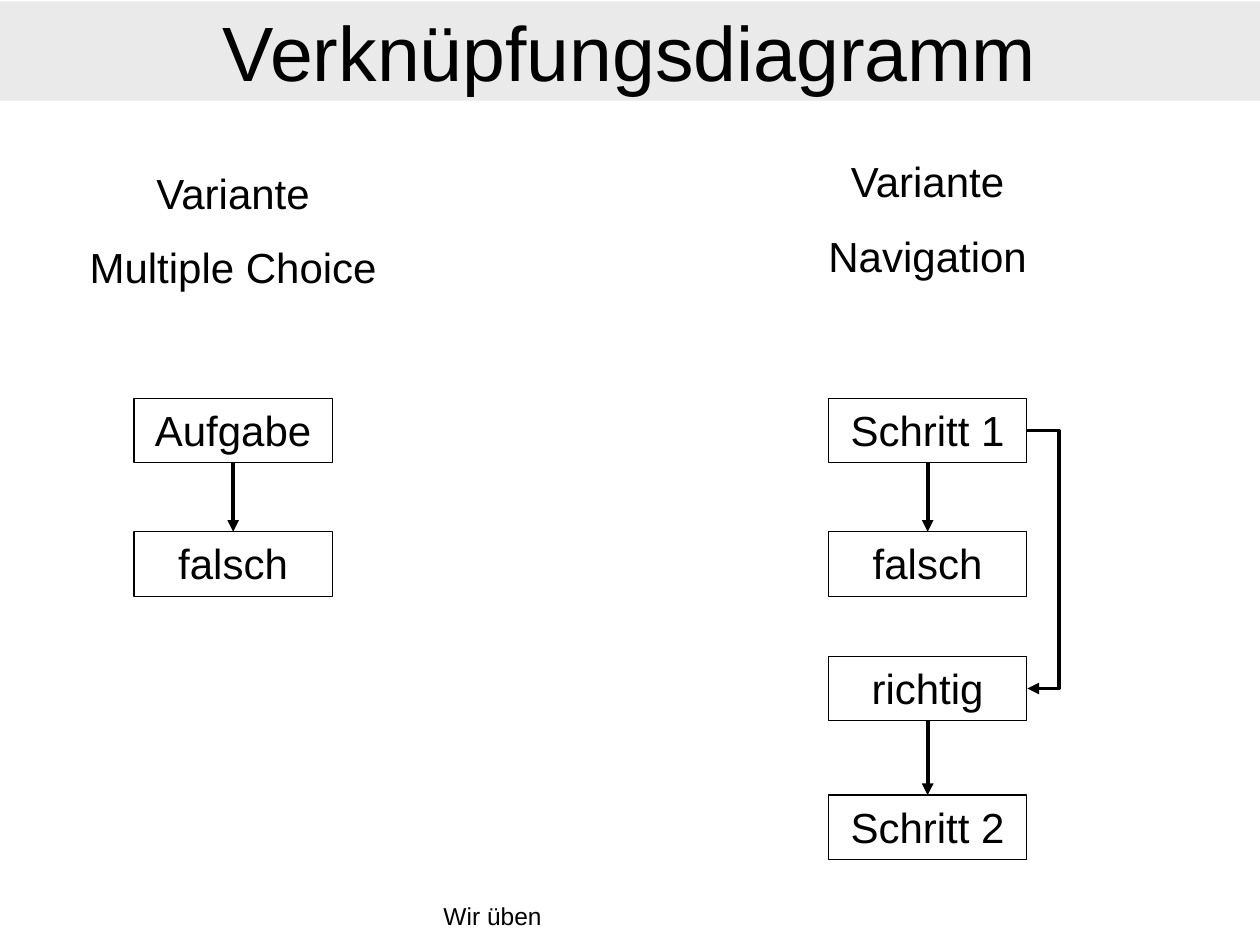
from dataclasses import dataclass

import pptx
import pptx.dml.color
import pptx.enum.shapes
import pptx.enum.text
import pptx.oxml
import pptx.oxml.ns
import pptx.util
from lxml import etree

Cm = pptx.util.Cm
Pt = pptx.util.Pt
RGB = pptx.dml.color.RGBColor
ALIGN = pptx.enum.text.PP_ALIGN
ANCHOR = pptx.enum.text.MSO_ANCHOR
SHAPE = pptx.enum.shapes.MSO_SHAPE
CONNECTOR = pptx.enum.shapes.MSO_CONNECTOR
qn = pptx.oxml.ns.qn


@dataclass(frozen=True)
class Theme:
    font: str = "Arial"
    ink: RGB = RGB(0, 0, 0)
    band: RGB = RGB(0xEA, 0xEA, 0xEA)
    title: float = 44
    body: float = 24
    footer: float = 14
    outline: float = 0.75
    arrow: float = 2.25
    gap: float = 13.8


THEME = Theme()
BOX_W, BOX_H = 4, 1.3
HEADING_W, HEADING_H = 8, 2.8
STEP_TOPS = (8.03, 10.72, 13.23, 16.03)
DETOUR, DETOUR_SPAN = 0.64, 0.01


def write(sp, text, size=THEME.body, align=ALIGN.CENTER, anchor=ANCHOR.TOP):
    tf = sp.text_frame
    tf.word_wrap = True
    tf.vertical_anchor = anchor
    for i, line in enumerate(text.split("\n")):
        p = tf.add_paragraph() if i else tf.paragraphs[0]
        p.alignment = align
        p.space_before = Pt(THEME.gap if i else 0)
        r = p.add_run()
        r.text = line
        r.font.name = THEME.font
        r.font.size = Pt(size)
        r.font.color.rgb = THEME.ink


def add_text(s, text, x, y, w, h, **fmt):
    write(s.shapes.add_textbox(Cm(x), Cm(y), Cm(w), Cm(h)), text, **fmt)


def add_rect(s, text, x, y, w, h, fill=None, **fmt):
    sp = s.shapes.add_shape(SHAPE.RECTANGLE, Cm(x), Cm(y), Cm(w), Cm(h))
    sp.shadow.inherit = False
    if fill is None:
        sp.fill.background()
        sp.line.color.rgb = THEME.ink
        sp.line.width = Pt(THEME.outline)
    else:
        sp.fill.solid()
        sp.fill.fore_color.rgb = fill
        sp.line.fill.background()
    write(sp, text, **fmt)


def add_arrow(s, x1, y1, x2, y2, kind=CONNECTOR.STRAIGHT):
    sp = s.shapes.add_connector(kind, Cm(x1), Cm(y1), Cm(x2), Cm(y2))
    sp.line.color.rgb = THEME.ink
    sp.line.width = Pt(THEME.arrow)
    etree.SubElement(sp.line._get_or_add_ln(), qn("a:tailEnd"), type="triangle")
    etree.SubElement(sp._element.spPr, qn("a:effectLst"))
    return sp


def add_detour(s, x, y1, y2):
    sp = add_arrow(s, x, y1, x + DETOUR_SPAN, y2, CONNECTOR.ELBOW)
    geom = sp._element.spPr.find(qn("a:prstGeom"))
    guides = geom.find(qn("a:avLst"))
    if guides is None:
        guides = etree.SubElement(geom, qn("a:avLst"))
    value = round(DETOUR / DETOUR_SPAN * 100000)
    etree.SubElement(guides, qn("a:gd"), name="adj1", fmla=f"val {value}")


def add_variant(s, x, heading, heading_top, steps, arrows, detours=()):
    center = x + BOX_W / 2
    add_text(s, heading, center - HEADING_W / 2, heading_top, HEADING_W, HEADING_H)
    for step, y in zip(steps, STEP_TOPS):
        add_rect(s, step, x, y, BOX_W, BOX_H)
    for i in arrows:
        add_arrow(s, center, STEP_TOPS[i] + BOX_H, center, STEP_TOPS[i + 1])
    for i, j in detours:
        add_detour(s, x + BOX_W, STEP_TOPS[i] + BOX_H / 2, STEP_TOPS[j] + BOX_H / 2)


def main():
    prs = pptx.Presentation()
    prs.slide_width, prs.slide_height = Cm(25.4), Cm(19.05)
    s = prs.slides.add_slide(prs.slide_layouts[6])
    add_rect(s, "Verknüpfungsdiagramm", 0, 0.03, 25.4, 2, fill=THEME.band,
             size=THEME.title, anchor=ANCHOR.MIDDLE)
    add_variant(s, 2.7, "Variante\nMultiple Choice", 3.25,
                ("Aufgabe", "falsch"), arrows=(0,))
    add_variant(s, 16.7, "Variante\nNavigation", 3.02,
                ("Schritt 1", "falsch", "richtig", "Schritt 2"),
                arrows=(0, 2), detours=((0, 2),))
    add_text(s, "Wir üben", 8.69, 18.03, 8.05, 1,
             size=THEME.footer, align=ALIGN.LEFT)
    prs.save("out.pptx")


if __name__ == "__main__":
    main()
